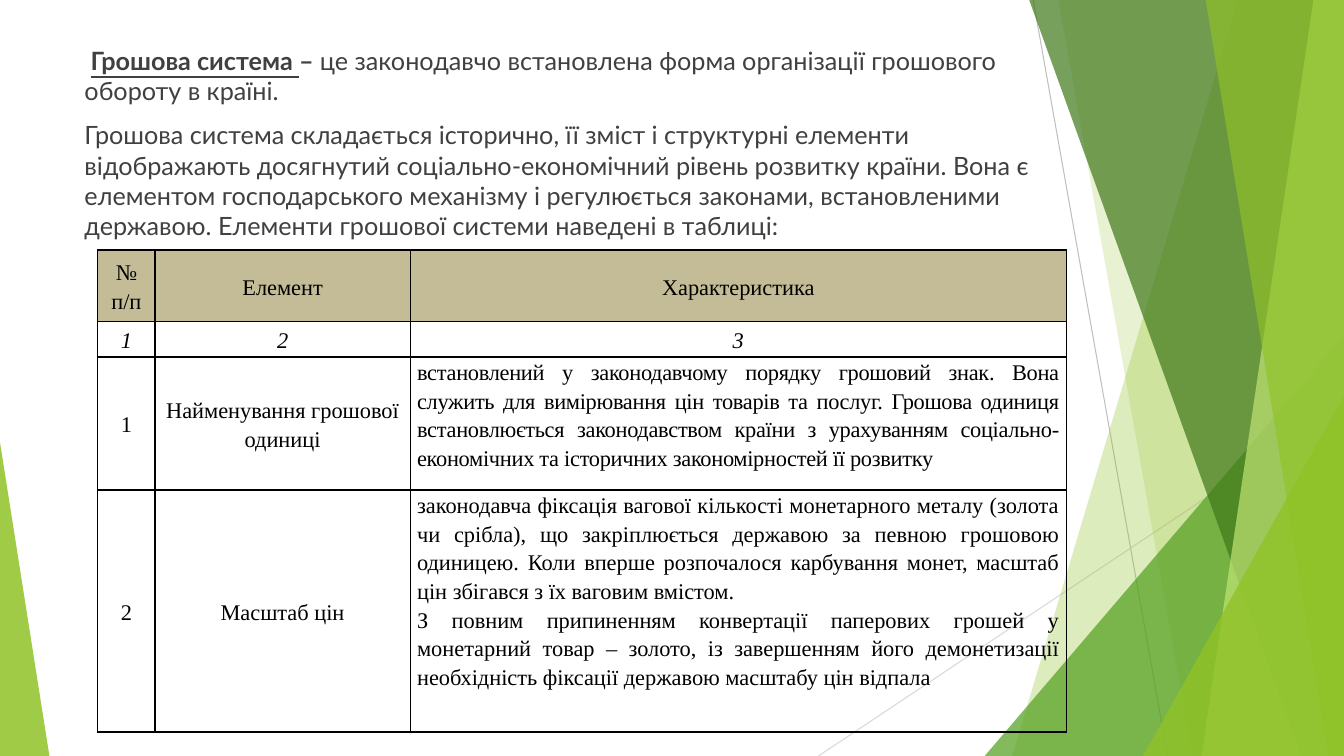
"""Build a slide on the elements of a monetary system."""
from dataclasses import dataclass

from lxml import etree
from pptx import Presentation, oxml
from pptx import util as u
from pptx.dml import color
from pptx.enum import shapes, text

Pt = u.Pt
MID, LEFT, FULL = text.PP_ALIGN.CENTER, text.PP_ALIGN.LEFT, text.PP_ALIGN.JUSTIFY


@dataclass(frozen=True)
class Theme:
    """Colours, fonts and type sizes."""
    lime: str = "90C226"
    green: str = "54A021"
    dark: str = "3F7819"
    pale: str = "C0E474"
    gray: str = "BFBFBF"
    mist: str = "D9D9D9"
    ink: str = "404040"
    black: str = "000000"
    head: str = "C4BC96"
    sans: str = "Lato"
    serif: str = "Times New Roman"
    body: float = 18
    cell: float = 16


T = Theme()
INTRO = [
    [(" ", {"bold": True}),
     ("Грошова система ", {"bold": True, "underline": True}),
     ("– ", {"bold": True}),
     ("це законодавчо встановлена форма організації грошового обороту в країні.", {})],
    [("Грошова система складається історично, її зміст і структурні елементи "
      "відображають досягнутий соціально-економічний рівень розвитку країни. "
      "Вона є елементом господарського механізму і регулюється законами, "
      "встановленими державою. Елементи грошової системи наведені в таблиці:", {})],
]
ROWS = [
    ["№ п/п", "Елемент", "Характеристика"],
    ["1", "2", "3"],
    ["1", "Найменування грошової одиниці",
     "встановлений у законодавчому порядку грошовий знак. Вона служить для "
     "вимірювання цін товарів та послуг. Грошова одиниця встановлюється "
     "законодавством країни з урахуванням соціально-економічних та історичних "
     "закономірностей її розвитку"],
    ["2", "Масштаб цін",
     "законодавча фіксація вагової кількості монетарного металу (золота чи "
     "срібла), що закріплюється державою за певною грошовою одиницею. Коли "
     "вперше розпочалося карбування монет, масштаб цін збігався з їх ваговим "
     "вмістом.\n"
     "З повним припиненням конвертації паперових грошей у монетарний товар – "
     "золото, із завершенням його демонетизації необхідність фіксації державою "
     "масштабу цін відпала"],
]
COLS = [41, 182.2, 468.8]
HIGH = [51, 25.4, 95, 172.8]


def rgb(code):
    """Turn a hex code into a colour."""
    return color.RGBColor.from_string(code)


def put(obj, form):
    """Set each attribute of a format dict."""
    for key, val in form.items():
        setattr(obj, key, val)


def write(para, words, font, size, tint, form):
    """Add one styled run to a paragraph."""
    run = para.add_run()
    run.text = words
    put(run.font, {"name": font, "size": Pt(size), **form})
    run.font.color.rgb = rgb(tint)
    return run


def paint(shape, tint, alpha):
    """Give a shape a translucent fill and no outline."""
    shape.shadow.inherit = False
    shape.fill.solid()
    shape.fill.fore_color.rgb = rgb(tint)
    shape.line.fill.background()
    node = shape.fill._xPr.find(".//" + oxml.ns.qn("a:srgbClr"))
    etree.SubElement(node, oxml.ns.qn("a:alpha"), val=str(alpha * 1000))


def rule(slide, ends, tint):
    """Draw a thin straight line."""
    line = slide.shapes.add_connector(shapes.MSO_CONNECTOR.STRAIGHT, *map(Pt, ends))
    put(line.line, {"width": Pt(0.75)})
    line.line.color.rgb = rgb(tint)
    etree.SubElement(line._element.spPr, oxml.ns.qn("a:effectLst"))


def facet(slide, box, top, base, tint, alpha):
    """Fill from a slanted edge to the right side of the box."""
    x, y, w, h = box
    form = slide.shapes.build_freeform(Pt(x + top), Pt(y), 1.0)
    form.add_line_segments([(Pt(x + a), Pt(y + b)) for a, b in
                            ((w, 0), (w, h), (base, h))], close=True)
    paint(form.convert_to_shape(), tint, alpha)


def wedge(slide, box, left, wide, tall, peak, tint, alpha):
    """Stand a triangle on the bottom of the box."""
    x, y, _, h = box
    tri = slide.shapes.add_shape(shapes.MSO_SHAPE.ISOSCELES_TRIANGLE,
                                 *map(Pt, (x + left, y + h - tall, wide, tall)))
    tri.adjustments[0] = peak
    paint(tri, tint, alpha)


def decor(slide, box):
    """Draw the green facets at the sides of the box."""
    x, y, w, h = box
    rule(slide, (x + 738, y, x + 834, y + h), T.gray)
    rule(slide, (x + w, y + 290, x + 584.6, y + h), T.mist)
    facet(slide, box, 884.2, 723, T.lime, 30)
    facet(slide, box, 756, 851.8, T.lime, 20)
    wedge(slide, box, 703.4, 256.6, 300.2, 1, T.green, 72)
    facet(slide, box, 735.2, 929.5, T.dark, 70)
    facet(slide, box, 938.2, 858.2, T.pale, 70)
    facet(slide, box, 861.2, 949, T.lime, 65)
    wedge(slide, box, 816.5, 143.5, 257, 1, T.lime, 80)
    wedge(slide, box, 0, 35.3, 224, 0, T.lime, 85)


def intro(slide, box):
    """Write the opening paragraphs."""
    frame = slide.shapes.add_textbox(*map(Pt, box)).text_frame
    put(frame, {"word_wrap": True, "vertical_anchor": text.MSO_ANCHOR.TOP})
    for i, parts in enumerate(INTRO):
        para = frame.paragraphs[0] if i == 0 else frame.add_paragraph()
        put(para, {"alignment": LEFT, "space_before": Pt(10 if i else 0)})
        for words, form in parts:
            write(para, words, T.sans, T.body, T.ink, form)


def edge(cell):
    """Outline a cell in black."""
    prop = cell._tc.get_or_add_tcPr()
    for side in "LRTB":
        line = etree.SubElement(prop, oxml.ns.qn("a:ln" + side), w=str(Pt(1)))
        fill = etree.SubElement(line, oxml.ns.qn("a:solidFill"))
        etree.SubElement(fill, oxml.ns.qn("a:srgbClr"), val=T.black)


def fill(cell, words, row, col):
    """Format and write one table cell."""
    prose = row > 1 and col == 2
    anchor = text.MSO_ANCHOR.TOP if prose else text.MSO_ANCHOR.MIDDLE
    put(cell, {"margin_left": Pt(5), "margin_right": Pt(5), "margin_top": 0,
               "margin_bottom": 0, "vertical_anchor": anchor})
    edge(cell)
    if row == 0:
        cell.fill.solid()
        cell.fill.fore_color.rgb = rgb(T.head)
    else:
        cell.fill.background()
    frame = cell.text_frame
    for i, part in enumerate(words.split("\n")):
        para = frame.add_paragraph() if i else frame.paragraphs[0]
        put(para, {"alignment": FULL if prose else MID, "line_spacing": 1.15})
        run = write(para, part, T.serif, T.cell, T.black,
                    {"bold": False, "italic": row == 1})
        if col == 2 and row in (1, 2):
            run._r.get_or_add_rPr().set("spc", "-20")


def table(slide, box):
    """Place the table of elements."""
    grid = slide.shapes.add_table(len(ROWS), len(COLS), *map(Pt, box)).table
    put(grid, {"first_row": False, "horz_banding": False})
    for col, wide in zip(grid.columns, COLS):
        col.width = Pt(wide)
    for r, (row, tall) in enumerate(zip(grid.rows, HIGH)):
        row.height = Pt(tall)
        for c, words in enumerate(ROWS[r]):
            fill(grid.cell(r, c), words, r, c)


def main():
    """Assemble and save the slide."""
    deck = Presentation()
    put(deck, {"slide_width": Pt(960), "slide_height": Pt(540)})
    slide = deck.slides.add_slide(deck.slide_layouts[6])
    decor(slide, (0, 0, 960, 540))
    intro(slide, (53.3, 28.8, 717, 466.6))
    table(slide, (69.8, 178.6, sum(COLS), sum(HIGH)))
    deck.save("out.pptx")


if __name__ == "__main__":
    main()
